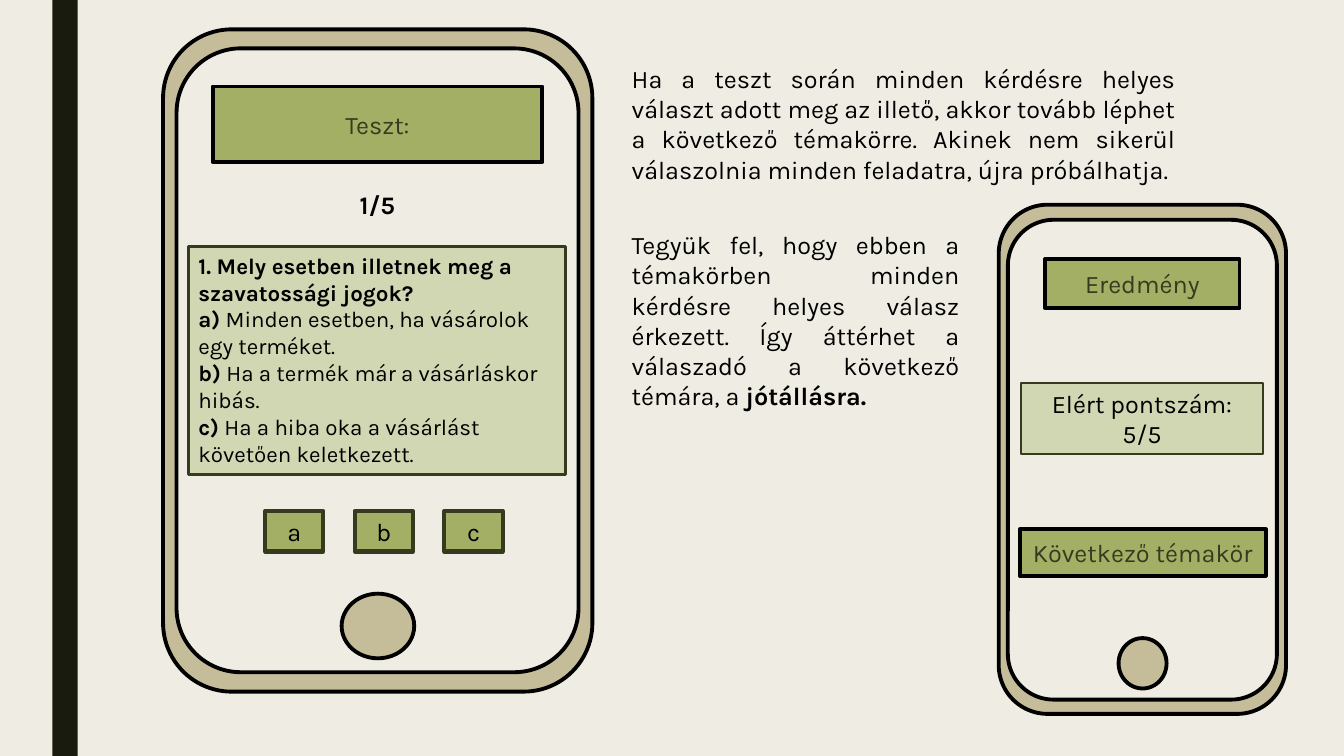
from dataclasses import dataclass

from pptx import Presentation
from pptx.dml.color import RGBColor
from pptx.enum.shapes import MSO_SHAPE as Kind
from pptx.enum.text import MSO_ANCHOR as Anchor, PP_ALIGN as Align
from pptx.shapes.autoshape import Shape
from pptx.slide import Slide
from pptx.util import Cm, Pt

CREAM = RGBColor(0xEF, 0xED, 0xE3)
BLACK = RGBColor(0x00, 0x00, 0x00)
DARK = RGBColor(0x19, 0x1B, 0x0E)
MOSS = RGBColor(0x36, 0x3A, 0x1E)
GREEN = RGBColor(0xA3, 0xAF, 0x65)
PALE = RGBColor(0xD1, 0xD7, 0xB2)
TAN = RGBColor(0xC5, 0xBD, 0x99)
FONT = "Karla"

Area = tuple[float, float, float, float]  # left, top, width, height in cm
Line = tuple[tuple[str, bool], ...]       # runs of one paragraph: text, bold


@dataclass
class Phone:
    body: Area
    screen: Area
    home: Area
    curve: float


@dataclass
class Panel:
    area: Area
    lines: tuple[Line, ...]
    fill: RGBColor | None = None
    edge: RGBColor = BLACK
    width: float = 2.75
    ink: RGBColor = BLACK
    size: int = 18
    align: Align = Align.CENTER
    anchor: Anchor = Anchor.TOP


def plain(*texts: str) -> tuple[Line, ...]:
    return tuple(((text, False),) for text in texts)


def add_form(slide: Slide, kind: Kind, area: Area, fill: RGBColor,
             edge: RGBColor | None = BLACK, width: float = 2.75) -> Shape:
    form = slide.shapes.add_shape(kind, *map(Cm, area))
    form.shadow.inherit = False
    form.fill.solid()
    form.fill.fore_color.rgb = fill
    if edge is None:
        form.line.fill.background()
    else:
        form.line.color.rgb = edge
        form.line.width = Pt(width)
    return form


def draw_phone(slide: Slide, phone: Phone) -> None:
    for area, fill in ((phone.body, TAN), (phone.screen, CREAM)):
        form = add_form(slide, Kind.ROUNDED_RECTANGLE, area, fill)
        form.adjustments[0] = phone.curve
    add_form(slide, Kind.OVAL, phone.home, TAN)


def draw_panel(slide: Slide, panel: Panel) -> None:
    if panel.fill is None:
        box = slide.shapes.add_textbox(*map(Cm, panel.area))
    else:
        box = add_form(slide, Kind.RECTANGLE, panel.area, panel.fill,
                       panel.edge, panel.width)
    frame = box.text_frame
    frame.word_wrap = True
    frame.vertical_anchor = panel.anchor
    for i, line in enumerate(panel.lines):
        para = frame.add_paragraph() if i else frame.paragraphs[0]
        para.alignment = panel.align
        for text, bold in line:
            run = para.add_run()
            run.text = text
            run.font.name = FONT
            run.font.size = Pt(panel.size)
            run.font.bold = bold
            run.font.color.rgb = panel.ink


def label(area: Area, text: str) -> Panel:
    return Panel(area, plain(text), GREEN, ink=MOSS, anchor=Anchor.MIDDLE)


PHONES = (
    Phone((4.11, 0.74, 10.82, 16.69), (4.45, 1.22, 10.13, 15.72),
          (8.61, 14.96, 1.83, 1.63), 0.16),
    Phone((25.17, 5.16, 7.24, 12.83), (25.4, 5.54, 6.78, 12.09),
          (28.19, 16.08, 1.21, 1.27), 0.17),
)

QUIZ = (
    (("1. Mely esetben illetnek meg a szavatossági jogok?", True),),
    (("a)", True), (" Minden esetben, ha vásárolok egy terméket.", False)),
    (("b)", True), (" Ha a termék már a vásárláskor hibás.", False)),
    (("c)", True),
     (" Ha a hiba oka a vásárlást követően keletkezett.", False)),
)

RULE = plain(
    "Ha a teszt során minden kérdésre helyes választ adott meg az illető, "
    "akkor tovább léphet a következő témakörre. Akinek nem sikerül "
    "válaszolnia minden feladatra, újra próbálhatja.")

CASE = ((
    ("Tegyük fel, hogy ebben a témakörben minden kérdésre helyes válasz "
     "érkezett. Így áttérhet a válaszadó a következő témára, a ", False),
    ("jótállásra.", True)),)

PANELS = (
    # Test phone
    label((5.36, 2.18, 8.31, 1.91), "Teszt:"),
    Panel((6.93, 4.65, 5.16, 1.04), ((("1/5", True),),)),
    Panel((4.75, 6.22, 9.5, 5.74), QUIZ, PALE, MOSS, 2.25,
          size=16, align=Align.LEFT),
    *(Panel((6.68 + 2.26 * i, 12.88, 1.47, 1.02), plain(key), GREEN, MOSS, 3)
      for i, key in enumerate("abc")),
    # Explanation
    Panel((15.67, 1.47, 14.2, 3.33), RULE, align=Align.JUSTIFY),
    Panel((15.67, 5.66, 8.76, 4.11), CASE, align=Align.JUSTIFY),
    # Result phone
    label((26.34, 6.53, 4.9, 1.24), "Eredmény"),
    Panel((25.73, 9.65, 6.1, 1.8), plain("Elért pontszám:", "5/5"),
          PALE, MOSS, 1.5),
    label((25.7, 13.34, 6.2, 1.17), "Következő témakör"),
)


def main() -> None:
    deck = Presentation()
    deck.slide_width, deck.slide_height = Cm(33.87), Cm(19.05)
    slide = deck.slides.add_slide(deck.slide_layouts[6])

    # Background and side bar
    slide.background.fill.solid()
    slide.background.fill.fore_color.rgb = CREAM
    add_form(slide, Kind.RECTANGLE, (1.32, 0, 0.64, 19.05), DARK, None)

    # Phones, then what they show
    for phone in PHONES:
        draw_phone(slide, phone)
    for panel in PANELS:
        draw_panel(slide, panel)

    deck.save("out.pptx")


if __name__ == "__main__":
    main()
